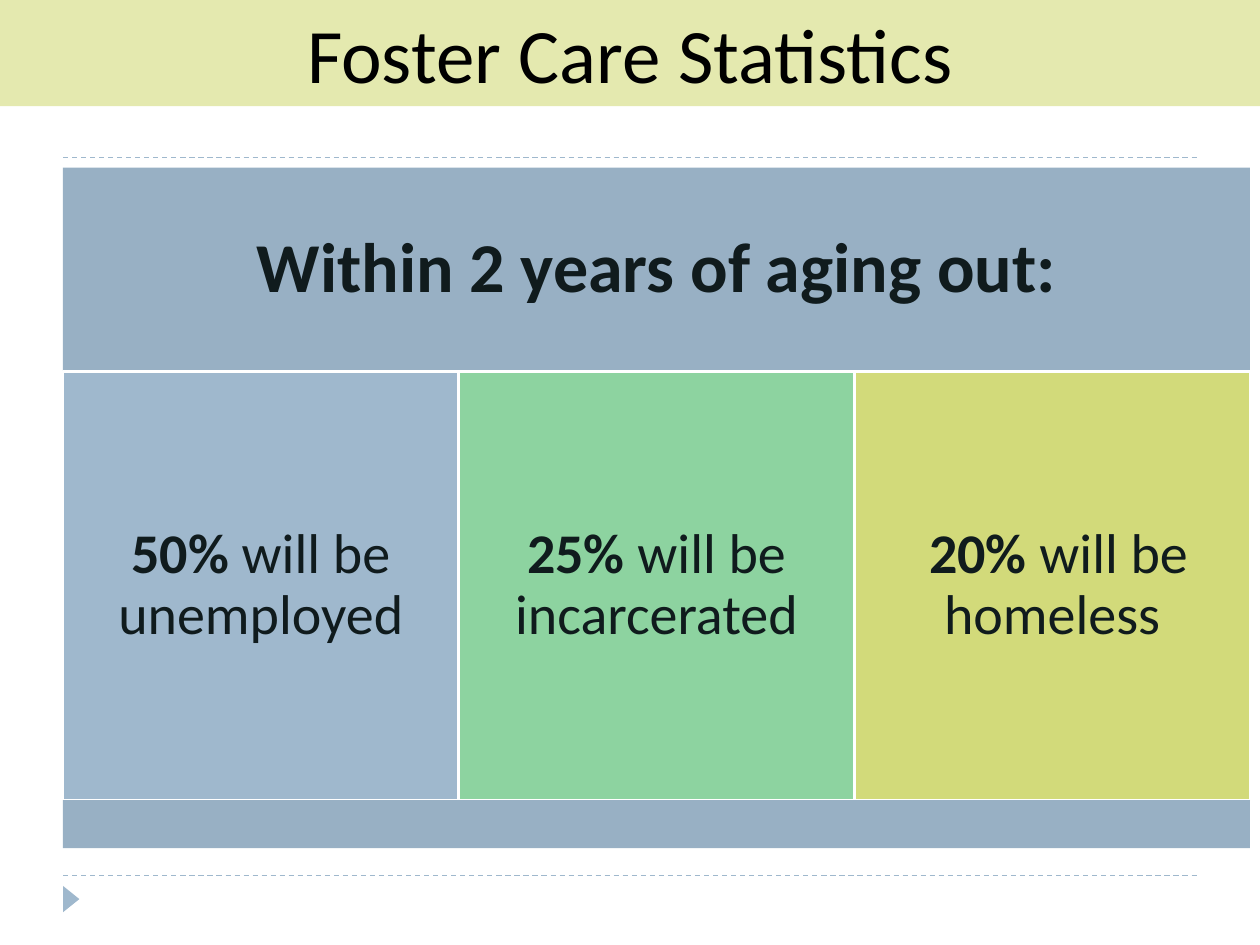
from dataclasses import dataclass

from lxml.etree import SubElement
from pptx import Presentation
from pptx.dml.color import RGBColor
from pptx.enum.dml import MSO_LINE
from pptx.enum.shapes import MSO_CONNECTOR, MSO_SHAPE
from pptx.enum.text import MSO_ANCHOR, MSO_AUTO_SIZE, PP_ALIGN
from pptx.oxml.ns import qn
from pptx.shapes.autoshape import Shape
from pptx.slide import Slide
from pptx.util import Cm, Pt


@dataclass(frozen=True)
class Theme:
    font: str = "Calibri"
    title_size: int = 44
    header_size: int = 40
    column_size: int = 32
    black: str = "000000"
    ink: str = "101B1D"
    white: str = "FFFFFF"
    title_band: str = "E4E9AF"
    frame: str = "98B0C4"
    blue: str = "9FB8CD"
    green: str = "8DD3A0"
    lime: str = "D2DA7A"


@dataclass(frozen=True)
class Box:
    left: float
    top: float
    width: float
    height: float


@dataclass(frozen=True)
class Statistic:
    share: str
    outcome: str
    fill: str


THEME = Theme()
SLIDE_WIDTH, SLIDE_HEIGHT = 25.4, 19.05
MARGIN = 1.27
PANEL_WIDTH = 23.93
HEADER_TOP, COLUMN_TOP, FOOTER_TOP, FOOTER_BOTTOM = 3.38, 7.49, 16.13, 17.1
RULE_TOPS = (17.65, 3.18)

STATISTICS = (
    Statistic("50% ", "will be unemployed", THEME.blue),
    Statistic("25% ", "will be incarcerated", THEME.green),
    Statistic(" 20% ", "will be homeless", THEME.lime),
)


def add_block(slide: Slide, box: Box, fill: str, outline: str = "",
              kind: MSO_SHAPE = MSO_SHAPE.RECTANGLE) -> Shape:
    shape = slide.shapes.add_shape(
        kind, Cm(box.left), Cm(box.top), Cm(box.width), Cm(box.height))
    shape.shadow.inherit = False
    shape.fill.solid()
    shape.fill.fore_color.rgb = RGBColor.from_string(fill)
    if outline:
        shape.line.color.rgb = RGBColor.from_string(outline)
        shape.line.width = Pt(1.5)
    else:
        shape.line.fill.background()
    return shape


def write(shape: Shape, lead: str, size: int, color: str, rest: str = "",
          bold: bool = True, inset: float = 0.25, line_spacing: float = 0.9) -> None:
    """Write centred text; the lead may be bold, the rest is regular."""
    frame = shape.text_frame
    frame.text = lead
    frame.word_wrap = True
    frame.vertical_anchor = MSO_ANCHOR.MIDDLE
    frame.margin_left = frame.margin_right = Cm(inset)
    frame.margin_top = frame.margin_bottom = Cm(inset)
    paragraph = frame.paragraphs[0]
    paragraph.alignment = PP_ALIGN.CENTER
    paragraph.line_spacing = line_spacing
    if rest:
        paragraph.add_run().text = rest
    for index, run in enumerate(paragraph.runs):
        run.font.name = THEME.font
        run.font.size = Pt(size)
        run.font.bold = bold and index == 0
        run.font.color.rgb = RGBColor.from_string(color)


def add_rule(slide: Slide, top: float) -> None:
    rule = slide.shapes.add_connector(
        MSO_CONNECTOR.STRAIGHT, Cm(MARGIN), Cm(top), Cm(SLIDE_WIDTH - MARGIN), Cm(top))
    rule.line.color.rgb = RGBColor.from_string(THEME.blue)
    rule.line.width = Pt(0.75)
    rule.line.dash_style = MSO_LINE.DASH
    SubElement(rule.element.spPr, qn("a:effectLst"))


def add_title(slide: Slide) -> None:
    band = add_block(slide, Box(0, 0, SLIDE_WIDTH, 2.14), THEME.title_band)
    write(band, "Foster Care Statistics", THEME.title_size, THEME.black,
          bold=False, line_spacing=1.0)
    frame = band.text_frame
    frame.vertical_anchor = MSO_ANCHOR.TOP
    frame.margin_top = frame.margin_bottom = Cm(0.13)
    frame.auto_size = MSO_AUTO_SIZE.SHAPE_TO_FIT_TEXT


def add_panel(slide: Slide) -> None:
    # Header bar
    header = add_block(
        slide, Box(MARGIN, HEADER_TOP, PANEL_WIDTH, COLUMN_TOP - HEADER_TOP), THEME.frame)
    write(header, "Within 2 years of aging out:", THEME.header_size, THEME.ink, inset=0.43)

    # One column per statistic
    width = PANEL_WIDTH / len(STATISTICS)
    for index, statistic in enumerate(STATISTICS):
        box = Box(MARGIN + index * width, COLUMN_TOP, width, FOOTER_TOP - COLUMN_TOP)
        column = add_block(slide, box, statistic.fill, THEME.white)
        write(column, statistic.share, THEME.column_size, THEME.ink,
              rest=statistic.outcome, inset=0.33)

    # Footer bar
    add_block(slide, Box(MARGIN, FOOTER_TOP, PANEL_WIDTH, FOOTER_BOTTOM - FOOTER_TOP),
              THEME.frame)


def main() -> None:
    presentation = Presentation()
    presentation.slide_width = Cm(SLIDE_WIDTH)
    presentation.slide_height = Cm(SLIDE_HEIGHT)
    slide = presentation.slides.add_slide(presentation.slide_layouts[6])

    # Dashed rules and corner marker
    for top in RULE_TOPS:
        add_rule(slide, top)
    marker = add_block(slide, Box(1.17, 17.96, 0.53, 0.33), THEME.blue,
                       kind=MSO_SHAPE.ISOSCELES_TRIANGLE)
    marker.rotation = 90

    add_panel(slide)
    add_title(slide)
    presentation.save("out.pptx")


if __name__ == "__main__":
    main()
